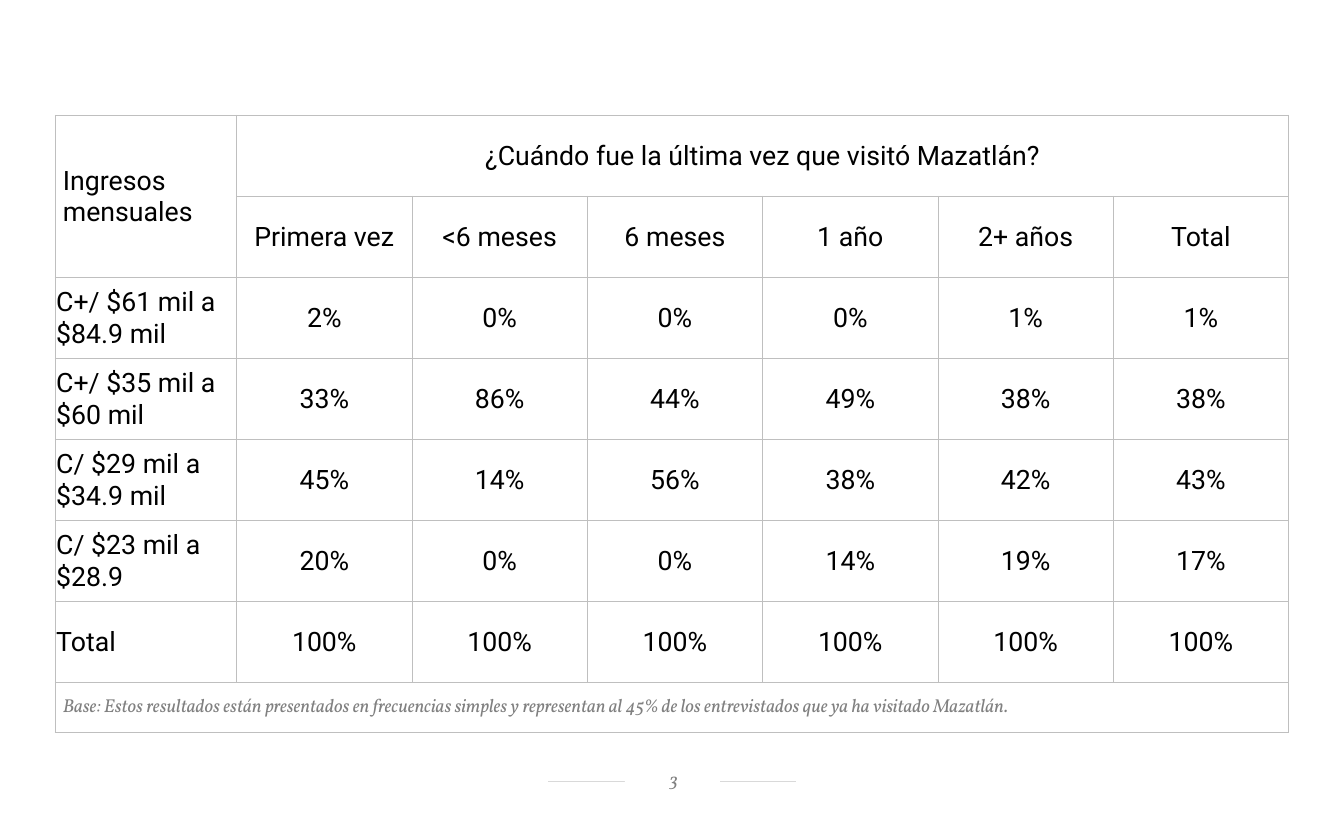
from lxml import etree
from pptx import Presentation
from pptx.dml.color import RGBColor
from pptx.enum.shapes import MSO_CONNECTOR, MSO_SHAPE
from pptx.enum.text import MSO_ANCHOR, PP_ALIGN
from pptx.oxml.ns import qn
from pptx.util import Inches, Pt

LEFT, CENTER = PP_ALIGN.LEFT, PP_ALIGN.CENTER
MIDDLE = MSO_ANCHOR.MIDDLE
STRAIGHT, RECTANGLE = MSO_CONNECTOR.STRAIGHT, MSO_SHAPE.RECTANGLE

WIDTH, HEIGHT = 14, 8.5
COLUMNS, ROWS = 140, 85

QUESTION = "¿Cuándo fue la última vez que visitó Mazatlán?"
VISITS = ["Primera vez", "<6 meses", "6 meses", "1 año", "2+ años", "Total"]
INCOMES = {
    "C+/ $61 mil a $84.9 mil": [2, 0, 0, 0, 1, 1],
    "C+/ $35 mil a $60 mil": [33, 86, 44, 49, 38, 38],
    "C/ $29 mil a $34.9 mil": [45, 14, 56, 38, 42, 43],
    "C/ $23 mil a $28.9": [20, 0, 0, 14, 19, 17],
    "Total": [100] * 6,
}
BASE_NOTE = (
    "Base: Estos resultados están presentados en frecuencias simples y "
    "representan al 45% de los entrevistados que ya ha visitado Mazatlán."
)


def color(value):
    return RGBColor.from_string(value)


def across(columns):
    return Inches(columns * WIDTH / COLUMNS)


def down(rows):
    return Inches(rows * HEIGHT / ROWS)


def write(frame, text, *, font="Roboto", size=20, ink="000000", italic=False, align=LEFT):
    para = frame.paragraphs[0]
    para.alignment = align
    span = para.add_run()
    span.text = text
    span.font.name = font
    span.font.size = Pt(size)
    span.font.italic = italic
    span.font.color.rgb = color(ink)


class Page:
    """The style and the current slide; lengths are grid columns and rows."""

    background = "FFFFFF"
    rule_color = "D9D9D9"
    border_color = "BFBFBF"
    line_width = Pt(0.5)
    small_print = {"font": "Vollkorn", "size": 14, "ink": "808080", "italic": True}

    def __init__(self, deck):
        self.slide = deck.slides.add_slide(deck.slide_layouts[6])

    def rule(self, left, right, row):
        line = self.slide.shapes.add_connector(
            STRAIGHT, across(left), down(row), across(right), down(row))
        line.line.color.rgb = color(self.rule_color)
        line.line.width = self.line_width
        etree.SubElement(line._element.spPr, qn("a:effectLst"))

    def page_number(self, text, left, top, width, height):
        box = self.slide.shapes.add_shape(
            RECTANGLE, across(left), down(top), across(width), down(height))
        box.shadow.inherit = False
        box.fill.solid()
        box.fill.fore_color.rgb = color(self.background)
        box.line.fill.background()
        frame = box.text_frame
        frame.word_wrap = True
        frame.vertical_anchor = MIDDLE
        frame.margin_left, frame.margin_right = Inches(0.12), Inches(0.1)
        frame.margin_top, frame.margin_bottom = Inches(0.02), Inches(0.05)
        write(frame, text, align=CENTER, **self.small_print)

    def table(self, left, top, widths, heights):
        frame = self.slide.shapes.add_table(
            len(heights), len(widths), across(left), down(top),
            across(sum(widths)), down(sum(heights)))
        table = frame.table
        table.first_row = table.horz_banding = False
        for column, width in zip(table.columns, widths):
            column.width = across(width)
        for row, height in zip(table.rows, heights):
            row.height = down(height)
        for cell in table.iter_cells():
            cell.fill.background()
            self.borders(cell)
        return table

    def borders(self, cell):
        properties = cell._tc.get_or_add_tcPr()
        for place, side in enumerate(("lnL", "lnR", "lnT", "lnB")):
            line = etree.Element(qn(f"a:{side}"), w=str(self.line_width))
            fill = etree.SubElement(line, qn("a:solidFill"))
            etree.SubElement(fill, qn("a:srgbClr"), val=self.border_color)
            properties.insert(place, line)

    def cell(self, cell, text, indent=0.01, **style):
        cell.vertical_anchor = MIDDLE
        cell.margin_left = Inches(indent)
        cell.margin_top = cell.margin_right = Inches(0.01)
        cell.margin_bottom = 0
        write(cell.text_frame, text, **style)


def add_income_table(page):
    width, height = 128.5, 64.3
    label_width, note_height = 18.9, 5.2
    body_rows = len(INCOMES) + 2
    last_row, last_column = body_rows, len(VISITS)
    widths = [label_width] + [(width - label_width) / len(VISITS)] * len(VISITS)
    heights = [(height - note_height) / body_rows] * body_rows + [note_height]
    table = page.table((COLUMNS - width) / 2, 12, widths, heights)

    table.cell(0, 0).merge(table.cell(1, 0))
    table.cell(0, 1).merge(table.cell(0, last_column))
    table.cell(last_row, 0).merge(table.cell(last_row, last_column))

    page.cell(table.cell(0, 0), "Ingresos mensuales", indent=0.08)
    page.cell(table.cell(0, 1), QUESTION, align=CENTER)
    for column, visit in enumerate(VISITS, 1):
        page.cell(table.cell(1, column), visit, align=CENTER)
    for row, (income, shares) in enumerate(INCOMES.items(), 2):
        page.cell(table.cell(row, 0), income)
        for column, share in enumerate(shares, 1):
            page.cell(table.cell(row, column), f"{share}%", align=CENTER)
    page.cell(table.cell(last_row, 0), BASE_NOTE, indent=0.08, **page.small_print)


def main():
    deck = Presentation()
    deck.slide_width, deck.slide_height = Inches(WIDTH), Inches(HEIGHT)
    page = Page(deck)
    page.rule(57.1, 82.9, 81.4)
    page.page_number("3", 65.1, 79.8, 9.9, 2.9)
    add_income_table(page)
    deck.save("out.pptx")


if __name__ == "__main__":
    main()
